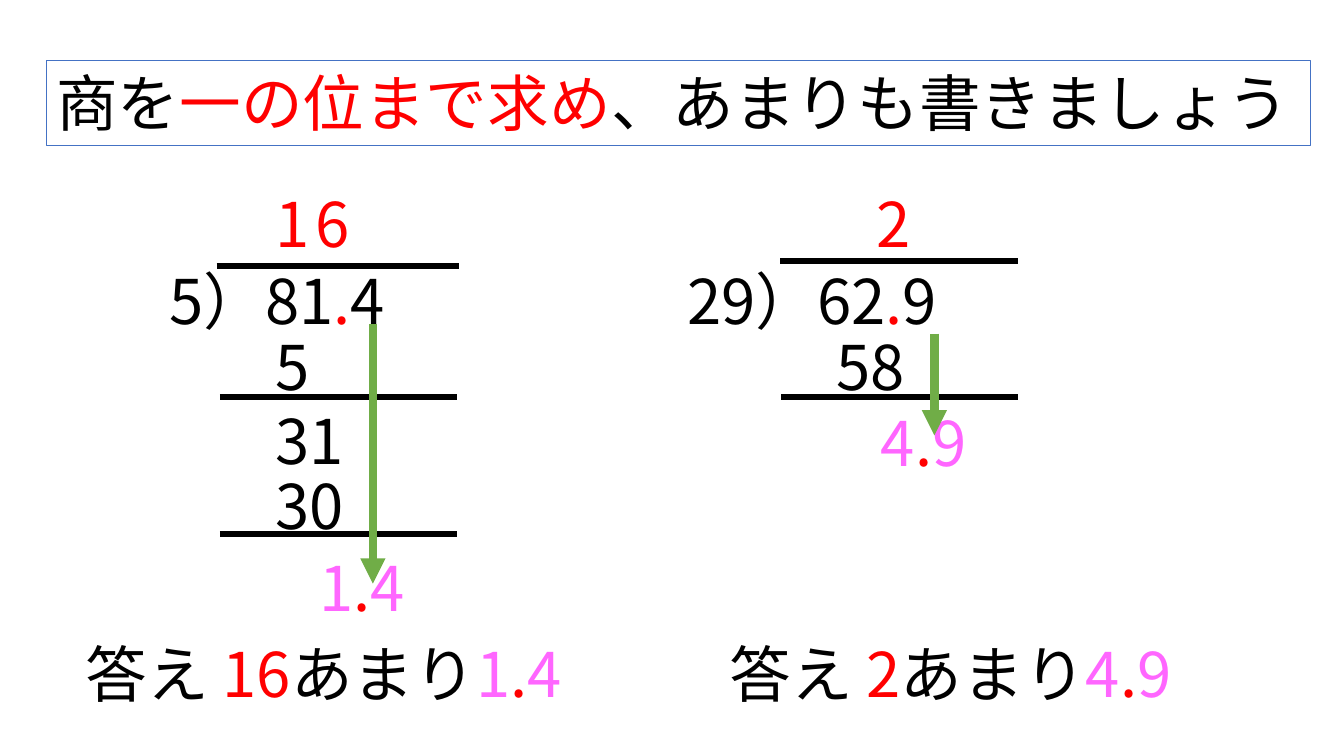
from lxml.etree import SubElement
from pptx import Presentation
from pptx.dml.color import RGBColor
from pptx.enum.shapes import MSO_CONNECTOR
from pptx.enum.text import MSO_AUTO_SIZE
from pptx.oxml.ns import qn
from pptx.util import Pt

BLACK = RGBColor(0x00, 0x00, 0x00)
RED = RGBColor(0xFF, 0x00, 0x00)
PINK = RGBColor(0xFF, 0x66, 0xFF)
GREEN = RGBColor(0x70, 0xAD, 0x47)
BLUE = RGBColor(0x44, 0x72, 0xC4)

FONT = "Noto Sans CJK JP"
TEXT_SIZE = 44
BOX_HEIGHT = 60.5
DIGIT_WIDTH = 46
TWO_DIGITS_WIDTH = 77
DECIMAL_WIDTH = 93.6

QUOTIENT_TOP = 129.6
DIVIDEND_TOP = 184.3
PRODUCT_TOP = 231.1
ANSWER_TOP = 450.7
FIRST_RULE_Y = 283.7


def add_text(page, spans, left, top, width, wrap=False, outline=None):
    """Add one line of text; spans is a list of (text, colour) pairs."""
    box = page.shapes.add_textbox(Pt(left), Pt(top), Pt(width), Pt(BOX_HEIGHT))
    if outline is not None:
        box.line.color.rgb = outline
        box.line.width = Pt(0.75)
    frame = box.text_frame
    frame.word_wrap = wrap
    frame.auto_size = MSO_AUTO_SIZE.SHAPE_TO_FIT_TEXT
    para = frame.paragraphs[0]
    for text, colour in spans:
        span = para.add_run()
        span.text = text
        span.font.size = Pt(TEXT_SIZE)
        span.font.name = FONT
        span.font.color.rgb = colour
        SubElement(span.font._element, qn("a:ea")).set("typeface", FONT)
    return box


def add_line(page, start, end, colour, width):
    line = page.shapes.add_connector(
        MSO_CONNECTOR.STRAIGHT, *(Pt(value) for value in (*start, *end)))
    line.line.color.rgb = colour
    line.line.width = Pt(width)
    SubElement(line._element.spPr, qn("a:effectLst"))
    return line


def add_rule(page, left, right, y):
    add_line(page, (left, y), (right, y), BLACK, 4.5)


def add_down_arrow(page, x, top, bottom):
    arrow = add_line(page, (x, top), (x, bottom), GREEN, 6)
    SubElement(arrow.line._get_or_add_ln(), qn("a:tailEnd")).set("type", "triangle")


def decimal(whole, tenths, colour):
    """Spans of a decimal number with a red point."""
    return [(whole, colour), (".", RED), (tenths, colour)]


def add_answer(page, quotient, remainder, left, width):
    spans = [("答え ", BLACK), (quotient, RED), ("あまり", BLACK), *remainder]
    add_text(page, spans, left, ANSWER_TOP, width)


def add_left_division(page):
    column = 189.4
    remainder = decimal("1", "4", PINK)
    add_rule(page, 154.8, 327.6, 190.1)
    for y in (FIRST_RULE_Y, 381.6):
        add_rule(page, 157, 326.2, y)
    add_text(page, decimal("5）81", "4", BLACK), 113.8, DIVIDEND_TOP, 200.9)
    for digit, left in (("1", column), ("6", 218.2)):
        add_text(page, [(digit, RED)], left, QUOTIENT_TOP, DIGIT_WIDTH)
    add_text(page, [("5", BLACK)], column, PRODUCT_TOP, DIGIT_WIDTH)
    add_text(page, [("31", BLACK)], column, 284.4, TWO_DIGITS_WIDTH, wrap=True)
    add_text(page, [("30", BLACK)], column, 330.5, TWO_DIGITS_WIDTH)
    add_text(page, remainder, 221, 389.5, DECIMAL_WIDTH, wrap=True)
    add_answer(page, "16", remainder, 54, 391.7)
    add_down_arrow(page, 266.4, 231.1, 416.9)


def add_right_division(page):
    remainder = decimal("4", "9", PINK)
    add_rule(page, 557.3, 727.2, 186.5)
    add_rule(page, 558, 727.2, FIRST_RULE_Y)
    add_text(page, decimal("29）62", "9", BLACK), 483.8, DIVIDEND_TOP, 232.6)
    add_text(page, [("2", RED)], 619.2, QUOTIENT_TOP, DIGIT_WIDTH)
    add_text(page, [("58", BLACK)], 590.4, PRODUCT_TOP, TWO_DIGITS_WIDTH)
    add_text(page, remainder, 622.1, 285.8, DECIMAL_WIDTH, wrap=True)
    add_answer(page, "2", remainder, 514.1, 373.7)
    add_down_arrow(page, 667.4, 238.3, 311)


def main():
    deck = Presentation()
    deck.slide_width, deck.slide_height = Pt(960), Pt(540)
    page = deck.slides.add_slide(deck.slide_layouts[6])
    task = [("商を", BLACK), ("一の位まで求め", RED),
            ("、あまりも書きましょう", BLACK)]
    add_text(page, task, 33.1, 43.2, 902.9, outline=BLUE)
    add_left_division(page)
    add_right_division(page)
    deck.save("out.pptx")


if __name__ == "__main__":
    main()
